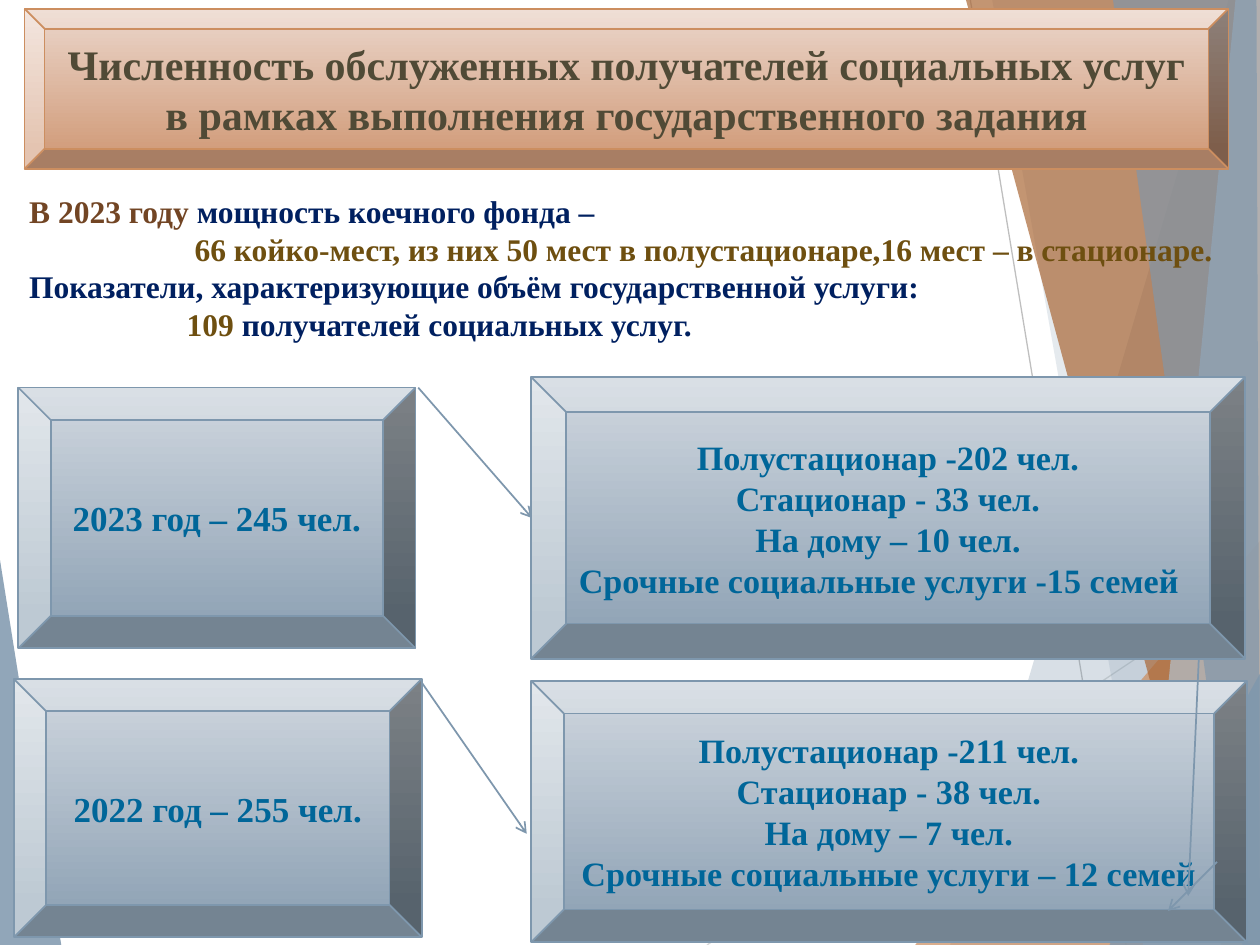
import pptx
import pptx.util
import pptx.dml.color
import pptx.enum.shapes
import pptx.enum.text
import pptx.oxml.ns
import lxml.etree

Pt = pptx.util.Pt
RGB = pptx.dml.color.RGBColor
Align = pptx.enum.text.PP_ALIGN
Anchor = pptx.enum.text.MSO_ANCHOR
Kind = pptx.enum.shapes.MSO_SHAPE
qn = pptx.oxml.ns.qn

FONT = "Times New Roman"
WIDE, HIGH = 720, 540
STEEL = RGB(0x7E, 0x97, 0xAD)
PALE = RGB(0xB2, 0xC1, 0xCE)
CLAY = RGB(0xCC, 0x8E, 0x60)
RUST = RGB(0xAA, 0x68, 0x37)
SILVER = RGB(0xD9, 0xD9, 0xD9)
GREY = RGB(0xBF, 0xBF, 0xBF)
OLIVE = RGB(0x50, 0x4A, 0x36)
TEAL = RGB(0x00, 0x66, 0x99)
BROWN = RGB(0x72, 0x45, 0x24)
NAVY = RGB(0x00, 0x20, 0x60)
GOLD = RGB(0x6E, 0x4F, 0x10)
WARM = (RGB(0xEB, 0xD6, 0xCB), RGB(0xD2, 0x9E, 0x7D))
COOL = (RGB(0xD0, 0xD7, 0xDF), RGB(0x92, 0xA5, 0xB7))

SHARDS = [
    (STEEL, 30, [(702, 0), (543, 540), (720, 540), (720, 0)]),
    (STEEL, 20, [(567, 0), (662, 540), (720, 540), (720, 0)]),
    (CLAY, 72, [(523, 540), (720, 309), (720, 540)]),
    (RUST, 70, [(552, 0), (698, 540), (720, 540), (720, 0)]),
    (PALE, 70, [(706, 0), (653, 540), (720, 540), (720, 0)]),
    (STEEL, 65, [(636, 0), (710, 540), (720, 540), (718.5, 0)]),
    (STEEL, 80, [(634, 540), (720, 385), (720, 540)]),
]
CORNER = (STEEL, 85, [(0, 320), (35.3, 540), (0, 540)])


def put(shape, box):
    shape.left, shape.top, shape.width, shape.height = map(Pt, box)


def write(para, text, size, color):
    run = para.add_run()
    run.text = text
    font = run.font
    font.name, font.size, font.bold = FONT, Pt(size), True
    font.color.rgb = color


def shard(slide, color, alpha, points):
    """Draw a translucent polygon; alpha is opacity in percent."""
    maker = slide.shapes.build_freeform(*points[0], scale=Pt(1))
    maker.add_line_segments(points[1:])
    shape = maker.convert_to_shape()
    shape.shadow.inherit = False
    shape.line.fill.background()
    shape.fill.solid()
    shape.fill.fore_color.rgb = color
    tint = shape._element.spPr.find(qn("a:solidFill"))[0]
    lxml.etree.SubElement(tint, qn("a:alpha")).set("val", str(alpha * 1000))


def line(slide, start, end, color, width, arrow=False):
    link = slide.shapes.add_connector(
        pptx.enum.shapes.MSO_CONNECTOR.STRAIGHT, *map(Pt, start + end))
    link.line.color.rgb = color
    link.line.width = Pt(width)
    if arrow:
        tail = lxml.etree.SubElement(link.line._get_or_add_ln(), qn("a:tailEnd"))
        tail.set("type", "arrow")
    lxml.etree.SubElement(link._element.spPr, qn("a:effectLst"))


def backdrop(slide):
    shard(slide, *CORNER)
    line(slide, (404, 540), (720, 329), SILVER, 0.75)
    line(slide, (554.5, 0), (643.5, 540), GREY, 0.75)
    for item in SHARDS:
        shard(slide, *item)


def bevel(slide, box, shades, edge):
    shape = slide.shapes.add_shape(Kind.BEVEL, *map(Pt, box))
    shape.shadow.inherit = False
    shape.fill.gradient()
    shape.fill.gradient_angle = 270
    for stop, shade, place in zip(shape.fill.gradient_stops, shades, (0, 0.88)):
        stop.color.rgb, stop.position = shade, place
    shape.line.color.rgb = edge
    shape.line.width = Pt(1)
    return shape


def panel(slide, box, rows, size, last=Align.CENTER):
    """Draw a bevelled box of centred rows; last aligns the final row."""
    frame = bevel(slide, box, COOL, STEEL).text_frame
    frame.word_wrap = True
    frame.vertical_anchor = Anchor.MIDDLE
    for i, row in enumerate(rows):
        para = frame.paragraphs[0] if i == 0 else frame.add_paragraph()
        para.alignment = last if i == len(rows) - 1 else Align.CENTER
        write(para, row, size, TEAL)


def raise_up(slide, shape):
    """Bring a placeholder in front of all that is drawn so far."""
    slide.shapes._spTree.append(shape._element)


def heading(slide, box):
    bevel(slide, box, WARM, CLAY)
    title = slide.shapes.title
    raise_up(slide, title)
    left, top, width, height = box
    rim = height / 8
    put(title, (left + rim, top + rim, width - 2 * rim, height - 2 * rim))
    frame = title.text_frame
    frame.word_wrap = True
    frame.auto_size = pptx.enum.text.MSO_AUTO_SIZE.NONE
    frame.vertical_anchor = Anchor.MIDDLE
    para = frame.paragraphs[0]
    para.alignment = Align.CENTER
    write(para, "Численность обслуженных получателей социальных услуг "
          "в рамках выполнения государственного задания", 24, OLIVE)


def summary(slide, box):
    rows = [
        (0, [("В 2023 году ", BROWN), ("мощность коечного фонда –", NAVY)]),
        (94.5, [("66 койко-мест, из них 50 мест в полустационаре,"
                 "16 мест – в стационаре.", GOLD)]),
        (0, [("Показатели, характеризующие объём государственной услуги:", NAVY)]),
        (90, [("109 ", GOLD), ("получателей социальных услуг.", NAVY)]),
    ]
    body = slide.placeholders[1]
    raise_up(slide, body)
    put(body, box)
    frame = body.text_frame
    frame.word_wrap = True
    frame.auto_size = pptx.enum.text.MSO_AUTO_SIZE.NONE
    for i, (indent, runs) in enumerate(rows):
        para = frame.paragraphs[0] if i == 0 else frame.add_paragraph()
        para.alignment = Align.LEFT
        para.space_before = Pt(0)
        props = para._p.get_or_add_pPr()
        props.set("marL", str(Pt(indent)))
        props.set("indent", "0")
        lxml.etree.SubElement(props, qn("a:buNone"))
        for text, color in runs:
            write(para, text, 18, color)


def main():
    deck = pptx.Presentation()
    deck.slide_width, deck.slide_height = Pt(WIDE), Pt(HIGH)
    slide = deck.slides.add_slide(deck.slide_layouts[1])
    backdrop(slide)
    heading(slide, (14, 5, 688, 91.5))
    panel(slide, (8, 388, 233, 147.5), ["2022 год – 255 чел."], 20)
    panel(slide, (303.5, 389, 409, 149.5),
          ["Полустационар -211 чел.", "Стационар - 38 чел.",
           "На дому – 7 чел.", "Срочные социальные услуги – 12 семей"], 19.5)
    for start, end in [((239, 221.5), (304, 296)), ((241, 390), (301, 476.5)),
                       ((686, 355), (679, 512)), ((695.5, 492.5), (667.5, 520.5))]:
        line(slide, start, end, STEEL, 1, arrow=True)
    panel(slide, (10.5, 221.5, 227, 149), ["2023 год – 245 чел."], 20)
    panel(slide, (303.5, 215.5, 408, 161),
          ["Полустационар -202 чел.", "Стационар - 33 чел.",
           "На дому – 10 чел.", "Срочные социальные услуги -15 семей"], 19.5,
          Align.JUSTIFY)
    summary(slide, (9.5, 106, 701, 94.5))
    deck.save("out.pptx")


if __name__ == "__main__":
    main()
